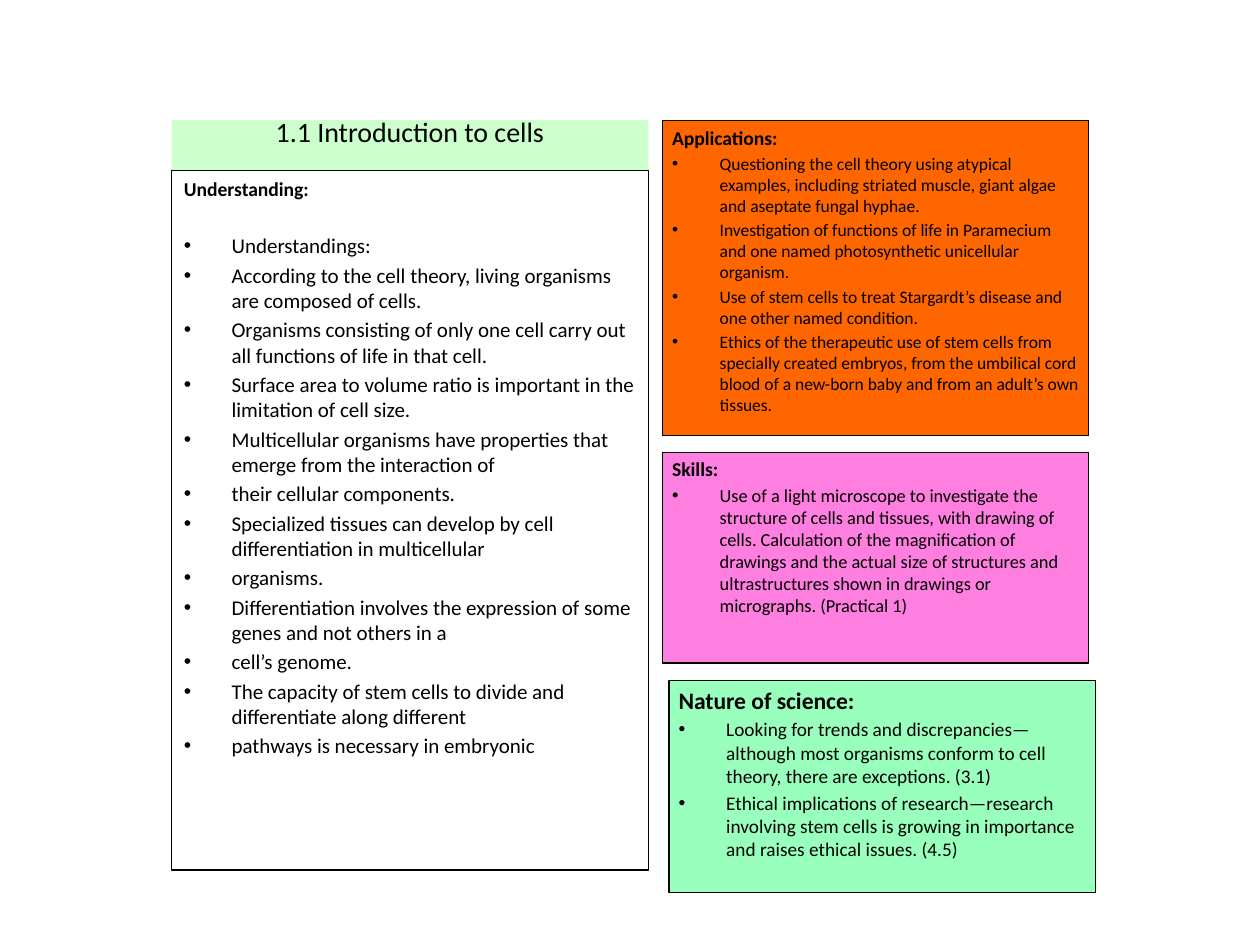
"""Build the syllabus overview slide for 1.1 Introduction to cells."""
from lxml import etree
from pptx import Presentation
from pptx import util as u
from pptx.dml.color import RGBColor
from pptx.enum import text
from pptx.oxml.ns import qn

BLACK = RGBColor(0x00, 0x00, 0x00)
WHITE = RGBColor(0xFF, 0xFF, 0xFF)
PALE_GREEN = RGBColor(0xCC, 0xFF, 0xCC)
ORANGE = RGBColor(0xFF, 0x66, 0x00)
PINK = RGBColor(0xFF, 0x7F, 0xE1)
MINT = RGBColor(0x98, 0xFF, 0xBC)


def format_font(paragraph, size, bold=False):
    paragraph.font.name = "Calibri"
    paragraph.font.size = u.Pt(size)
    paragraph.font.bold = bold
    paragraph.font.color.rgb = BLACK


def add_bullet(paragraph):
    properties = paragraph._p.get_or_add_pPr()
    properties.set("marL", str(u.Cm(0.96)))
    properties.set("indent", str(-u.Cm(0.96)))
    etree.SubElement(properties, qn("a:buFont")).set("typeface", "Arial")
    etree.SubElement(properties, qn("a:buChar")).set("char", "•")


presentation = Presentation()
presentation.slide_width, presentation.slide_height = u.Cm(25.4), u.Cm(19.05)
slide = presentation.slides.add_slide(presentation.slide_layouts[5])

title = slide.shapes.title
title.left, title.top, title.width, title.height = u.Cm(3.46), u.Cm(2.42), u.Cm(9.61), u.Cm(1.02)
title.fill.solid()
title.fill.fore_color.rgb = PALE_GREEN
title.text_frame.text = "1.1 Introduction to cells"
title.text_frame.auto_size = text.MSO_AUTO_SIZE.NONE
title.text_frame.vertical_anchor = text.MSO_ANCHOR.MIDDLE
title.text_frame.margin_top, title.text_frame.margin_bottom = 0, u.Cm(0.55)
title.text_frame.paragraphs[0].alignment = text.PP_ALIGN.CENTER
format_font(title.text_frame.paragraphs[0], 16)

panels = [
    ("Understanding:", (3.46, 3.44, 9.61, 14.1), (0.25, 0.13), WHITE, 11.2, 12, 18.5, [
        "Understandings:",
        "According to the cell theory, living organisms are composed of cells.",
        "Organisms consisting of only one cell carry out all functions of life in that cell.",
        "Surface area to volume ratio is important in the limitation of cell size.",
        "Multicellular organisms have properties that emerge from the interaction of",
        "their cellular components.",
        "Specialized tissues can develop by cell differentiation in multicellular",
        "organisms.",
        "Differentiation involves the expression of some genes and not others in a",
        "cell’s genome.",
        "The capacity of stem cells to divide and differentiate along different",
        "pathways is necessary in embryonic",
    ]),
    ("Applications:", (13.36, 2.43, 8.59, 6.35), (0.19, 0.1), ORANGE, 11.2, 10, 2, [
        "Questioning the cell theory using atypical examples, including striated muscle, "
        "giant algae and aseptate fungal hyphae.",
        "Investigation of functions of life in Paramecium and one named photosynthetic "
        "unicellular organism.",
        "Use of stem cells to treat Stargardt’s disease and one other named condition.",
        "Ethics of the therapeutic use of stem cells from specially created embryos, from the "
        "umbilical cord blood of a new-born baby and from an adult’s own tissues.",
    ]),
    ("Skills:", (13.36, 9.12, 8.59, 4.25), (0.19, 0.1), PINK, 11.2, 10.5, 2.1, [
        "Use of a light microscope to investigate the structure of cells and tissues, with "
        "drawing of cells. Calculation of the magnification of drawings and the actual size of "
        "structures and ultrastructures shown in drawings or micrographs. (Practical 1)",
    ]),
    ("Nature of science:", (13.49, 13.72, 8.59, 4.27), (0.19, 0.1), MINT, 13.5, 11, 2.2, [
        "Looking for trends and discrepancies—although most organisms conform to cell theory, "
        "there are exceptions. (3.1)",
        "Ethical implications of research—research involving stem cells is growing in "
        "importance and raises ethical issues. (4.5)",
    ]),
]

for heading, box, (side, edge), colour, heading_size, size, first_gap, points in panels:
    panel = slide.shapes.add_textbox(*[u.Cm(length) for length in box])
    panel.fill.solid()
    panel.fill.fore_color.rgb = colour
    panel.line.color.rgb = BLACK
    panel.line.width = u.Pt(0.75)
    frame = panel.text_frame
    frame.word_wrap = True
    frame.auto_size = text.MSO_AUTO_SIZE.NONE
    frame.margin_left = frame.margin_right = u.Cm(side)
    frame.margin_top = frame.margin_bottom = u.Cm(edge)
    frame.text = heading
    frame.paragraphs[0].space_before = u.Pt(heading_size * 0.2)
    format_font(frame.paragraphs[0], heading_size, bold=True)
    for index, point in enumerate(points):
        paragraph = frame.add_paragraph()
        paragraph.text = point
        paragraph.space_before = u.Pt(size * 0.2 if index else first_gap)
        add_bullet(paragraph)
        format_font(paragraph, size)

presentation.save("out.pptx")
